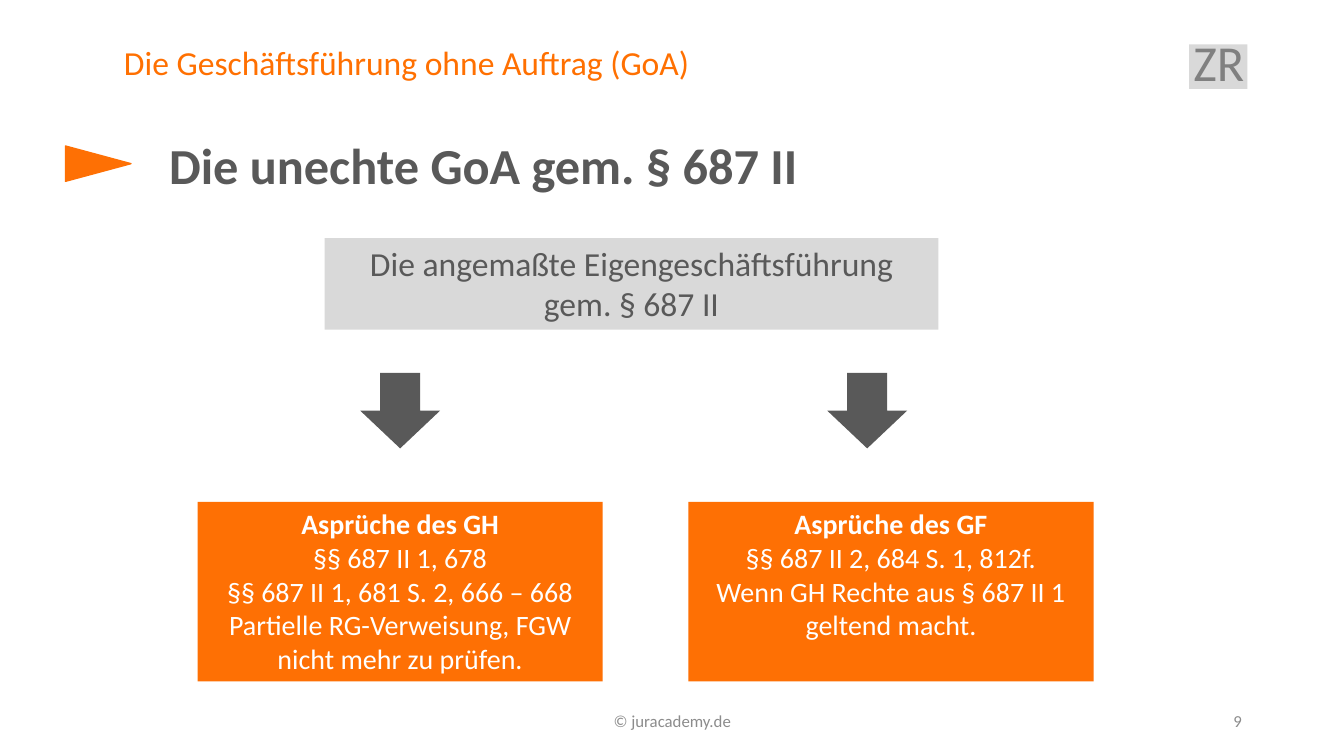
from pptx import Presentation
from pptx.dml.color import RGBColor
from pptx.enum.shapes import MSO_SHAPE
from pptx.enum.text import MSO_ANCHOR, MSO_AUTO_SIZE, PP_ALIGN
from pptx.util import Cm, Pt

RECTANGLE = MSO_SHAPE.RECTANGLE
TRIANGLE = MSO_SHAPE.ISOSCELES_TRIANGLE
DOWN_ARROW = MSO_SHAPE.DOWN_ARROW
TOP, MIDDLE = MSO_ANCHOR.TOP, MSO_ANCHOR.MIDDLE
LEFT, CENTER, RIGHT = PP_ALIGN.LEFT, PP_ALIGN.CENTER, PP_ALIGN.RIGHT
FIXED_SIZE = MSO_AUTO_SIZE.NONE

FONT = "Calibri"
ORANGE, TITLE_ORANGE = "FE7004", "FF7001"
DARK, MEDIUM, PALE, LIGHT = "595959", "808080", "8C8C8C", "D9D9D9"
WHITE = "FFFFFF"


def color(value):
    return RGBColor.from_string(value)


def write(shape, lines, size, text_color, align=LEFT, anchor=TOP,
          bold_first=False, spacing=None):
    frame = shape.text_frame
    frame.word_wrap = True
    frame.auto_size = FIXED_SIZE
    frame.vertical_anchor = anchor
    for index, line in enumerate(lines):
        para = frame.add_paragraph() if index else frame.paragraphs[0]
        para.alignment = align
        if spacing:
            para.line_spacing = spacing
        span = para.add_run()
        span.text = line
        span.font.name = FONT
        span.font.size = Pt(size)
        span.font.bold = bold_first and index == 0
        span.font.color.rgb = color(text_color)


def add_text(page, box, line, size, text_color, **style):
    text_box = page.shapes.add_textbox(*(Cm(length) for length in box))
    write(text_box, [line], size, text_color, **style)


def add_block(page, kind, box, fill):
    block = page.shapes.add_shape(kind, *(Cm(length) for length in box))
    block.shadow.inherit = False
    block.fill.solid()
    block.fill.fore_color.rgb = color(fill)
    block.line.fill.background()
    return block


def add_header(page, box, title, badge):
    left, top, width, height = box
    heading = page.shapes.title
    heading.left, heading.top = Cm(left), Cm(top)
    heading.width, heading.height = Cm(width - 3.2), Cm(height)
    write(heading, [title], 24, TITLE_ORANGE, spacing=0.9)
    badge_left = left + width - 1.47
    add_block(page, RECTANGLE, (badge_left, top + 0.08, 1.47, 1.12), LIGHT)
    add_text(page, (badge_left - 0.36, top - 0.2, 2.21, 1.9), badge, 36, MEDIUM,
             align=CENTER, spacing=0.9)


def add_topic(page, box, topic):
    left, top, width, height = box
    marker = add_block(page, TRIANGLE, (left, top + 0.05, 0.89, 1.65), ORANGE)
    marker.rotation = 90
    marker.line.color.rgb = color(ORANGE)
    marker.line.width = Pt(1)
    add_text(page, (left + 1.98, top, width - 1.98, height), topic, 36, DARK,
             bold_first=True)


def add_banner(page, box, line):
    banner = add_block(page, RECTANGLE, box, LIGHT)
    write(banner, [line], 24, DARK, align=CENTER)


def add_claims(page, box, arrow_offset, lines):
    left, top, width, height = box
    add_block(page, DOWN_ARROW, (left + arrow_offset, top, 2.01, 1.9), DARK)
    claims = add_block(page, RECTANGLE, (left, top + 3.25, width, height - 3.25), ORANGE)
    write(claims, lines, 20, WHITE, align=CENTER, bold_first=True)


def add_footer(page, box, notice, number):
    left, top, width, height = box
    add_text(page, (left, top, 11.43, height), notice, 12, PALE,
             align=CENTER, anchor=MIDDLE)
    add_text(page, (left + width - 7.62, top, 7.62, height), number, 12, PALE,
             align=RIGHT, anchor=MIDDLE)


def main():
    deck = Presentation()
    deck.slide_width, deck.slide_height = Cm(33.87), Cm(19.05)
    page = deck.slides.add_slide(deck.slide_layouts[5])
    add_header(page, (2.87, 1.04, 28.57, 1.19),
               "Die Geschäftsführung ohne Auftrag (GoA)", "ZR")
    add_topic(page, (2.03, 3.25, 21.87, 2.57), "Die unechte GoA gem. § 687 II")
    add_banner(page, (8.18, 6, 15.47, 2.31),
               "Die angemaßte Eigengeschäftsführung gem. § 687 II")
    add_claims(page, (4.98, 9.4, 10.21, 7.77), 4.1, [
        "Asprüche des GH",
        "§§ 687 II 1, 678",
        "§§ 687 II 1, 681 S. 2, 666 – 668",
        "Partielle RG-Verweisung, FGW nicht mehr zu prüfen.",
    ])
    add_claims(page, (17.35, 9.4, 10.21, 7.77), 3.5, [
        "Asprüche des GF",
        "§§ 687 II 2, 684 S. 1, 812f.",
        "Wenn GH Rechte aus § 687 II 1 geltend macht.",
    ])
    add_footer(page, (11.23, 17.65, 20.32, 1.02), "© juracademy.de", "9")
    deck.save("out.pptx")


if __name__ == "__main__":
    main()
